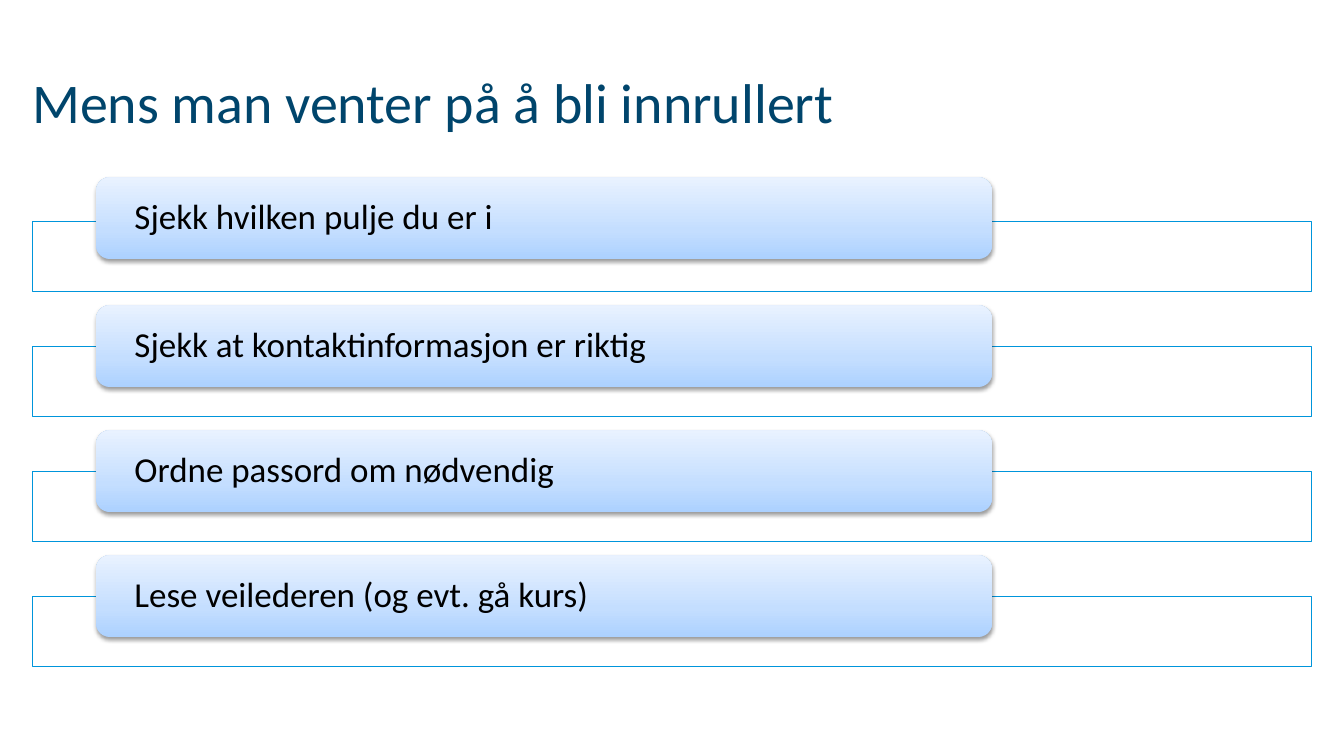
from dataclasses import dataclass

from lxml import etree
from pptx import Presentation
from pptx.dml.color import RGBColor
from pptx.enum.shapes import MSO_SHAPE
from pptx.enum.text import MSO_ANCHOR, PP_ALIGN
from pptx.oxml.ns import qn
from pptx.util import Inches, Pt

RECT = MSO_SHAPE.RECTANGLE
ROUNDED = MSO_SHAPE.ROUNDED_RECTANGLE
MIDDLE = MSO_ANCHOR.MIDDLE
BOTTOM = MSO_ANCHOR.BOTTOM
LEFT = PP_ALIGN.LEFT


@dataclass(frozen=True)
class Theme:
    font: str = "Calibri"
    title_size: int = 40
    step_size: int = 25
    title: str = "00456C"
    text: str = "000000"
    frame_fill: str = "FFFFFF"
    frame_line: str = "0095DB"
    shadow: str = "000000"
    gradient: tuple = ((0, "ACD1FF"), (35, "C4DEFF"), (100, "E9F2FF"))


THEME = Theme()
TITLE = "Mens man venter på å bli innrullert"
STEPS = (
    "Sjekk hvilken pulje du er i",
    "Sjekk at kontaktinformasjon er riktig",
    "Ordne passord om nødvendig",
    "Lese veilederen (og evt. gå kurs)",
)


def add_color(parent, color, alpha=100):
    clr = etree.SubElement(parent, qn("a:srgbClr"), val=color)
    if alpha < 100:
        etree.SubElement(clr, qn("a:alpha"), val=str(alpha * 1000))


def set_gradient(sp, stops):
    sp.fill.gradient()
    sp.fill.gradient_angle = 90
    gs_lst = sp._element.spPr.find(".//" + qn("a:gsLst"))
    for gs in list(gs_lst):
        gs_lst.remove(gs)
    for pos, color in stops:
        add_color(etree.SubElement(gs_lst, qn("a:gs"), pos=str(pos * 1000)), color)


def set_shadow(sp):
    sp.shadow.inherit = False
    effects = sp._element.spPr.find(qn("a:effectLst"))
    shadow = etree.SubElement(
        effects, qn("a:outerShdw"), blurRad=str(Pt(3.1)), dist=str(Pt(1.6)),
        dir="5400000", rotWithShape="0")
    add_color(shadow, THEME.shadow, 38)


def write_text(sp, text, size, color, anchor, insets):
    tf = sp.text_frame
    tf.word_wrap = True
    tf.vertical_anchor = anchor
    tf.margin_left, tf.margin_top, tf.margin_right, tf.margin_bottom = map(Inches, insets)
    p = tf.paragraphs[0]
    p.alignment = LEFT
    r = p.add_run()
    r.text = text
    r.font.name = THEME.font
    r.font.size = Pt(size)
    r.font.color.rgb = RGBColor.from_string(color)
    return p


def add_title(slide, x, y, w, h):
    sp = slide.shapes.add_textbox(*map(Inches, (x, y, w, h)))
    write_text(sp, TITLE, THEME.title_size, THEME.title, BOTTOM, (0, 0.05, 0.1, 0.05))


def add_frame(slide, x, y, w, h):
    sp = slide.shapes.add_shape(RECT, *map(Inches, (x, y, w, h)))
    sp.shadow.inherit = False
    sp.fill.solid()
    sp.fill.fore_color.rgb = RGBColor.from_string(THEME.frame_fill)
    white = sp._element.spPr.find(qn("a:solidFill")).find(qn("a:srgbClr"))
    etree.SubElement(white, qn("a:alpha"), val="90000")
    sp.line.color.rgb = RGBColor.from_string(THEME.frame_line)
    sp.line.width = Pt(0.75)


def add_label(slide, text, x, y, w, h):
    sp = slide.shapes.add_shape(ROUNDED, *map(Inches, (x, y, w, h)))
    set_gradient(sp, THEME.gradient)
    sp.line.fill.background()
    set_shadow(sp)
    p = write_text(sp, text, THEME.step_size, THEME.text, MIDDLE, (0.34, 0, 0.34, 0))
    p.line_spacing = 0.9


def add_steps(slide, x, y, w, h):
    frame_h, label_h = 0.69, 0.81
    pitch = (h - frame_h) / (len(STEPS) - 1)
    for i, text in enumerate(STEPS):
        top = y + i * pitch
        lift = 0.44 if i == 0 else 0.41
        add_frame(slide, x, top, w, frame_h)
        add_label(slide, text, x + 0.05 * w, top - lift, 0.7 * w, label_h)


def main():
    prs = Presentation()
    prs.slide_width, prs.slide_height = Inches(13.33), Inches(7.5)
    slide = prs.slides.add_slide(prs.slide_layouts[6])
    add_title(slide, 0.32, 0.3, 12.69, 1.09)
    add_steps(slide, 0.32, 2.2, 12.69, 4.41)
    prs.save("out.pptx")


if __name__ == "__main__":
    main()
